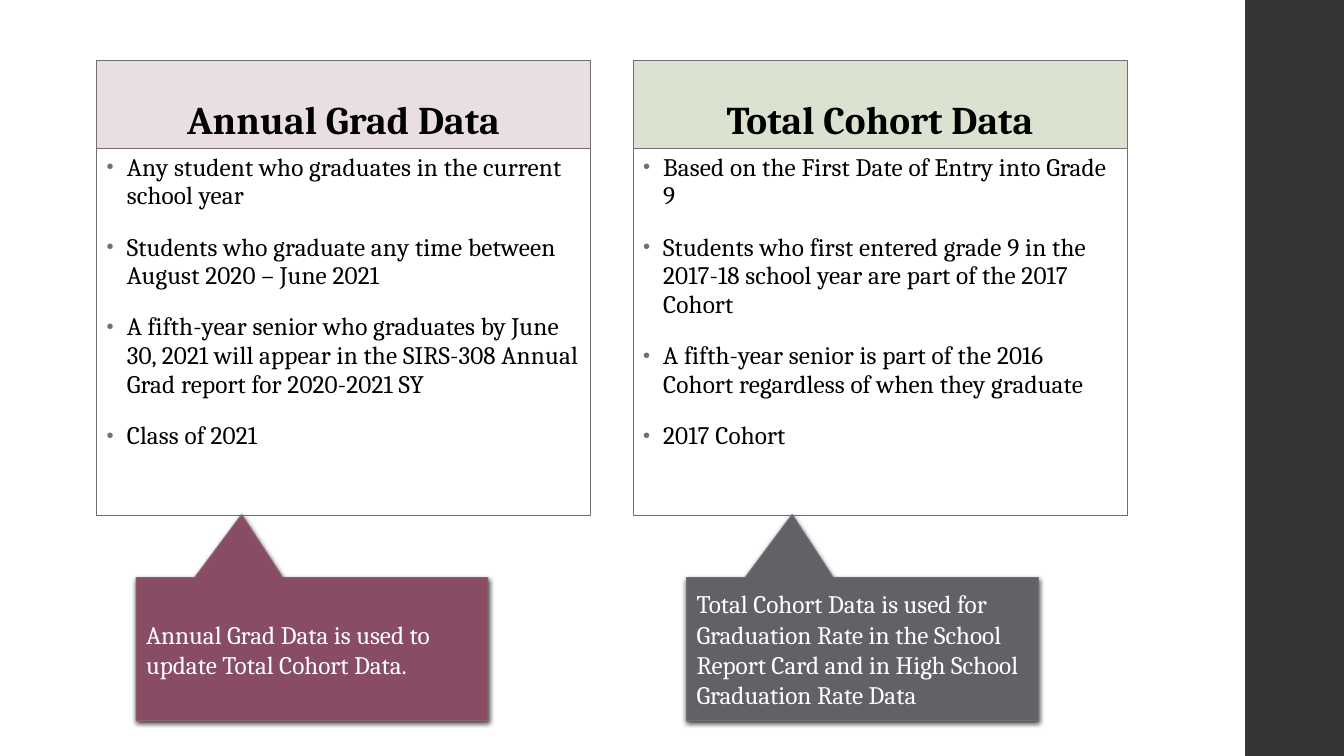
from lxml.etree import SubElement
from pptx import Presentation
from pptx.dml.color import RGBColor
from pptx.enum.shapes import MSO_SHAPE
from pptx.enum.text import MSO_ANCHOR, PP_ALIGN
from pptx.oxml.ns import qn
from pptx.util import Inches, Pt

WIDE, HIGH = Inches(13.33), Inches(7.5)
FONT = "Cambria"
COLORS = {
    "bar": "353537", "edge": "6F6F74", "ink": "000000", "white": "FFFFFF",
    "pink": "E9DFE3", "green": "DCE2D0",
    "plum": "884C64", "rim": "8D6374", "slate": "616168",
}

# Places and sizes are percent of the slide's width and height.
PANEL = {"left": 7.2, "step": 39.91, "width": 36.76}
NOTE = {"left": 10.13, "step": 40.96, "width": 26.18}
HEAD_TOP, HEAD_HIGH, LIST_HIGH = 8, 11.6, 48.53
NOTE_TOP, NOTE_HIGH = 76.4, 18.93

SIDES = [
    {
        "title": "Annual Grad Data", "tint": "pink",
        "items": [
            "Any student who graduates in the current school year",
            "Students who graduate any time between August 2020 – June 2021",
            "A fifth-year senior who graduates by June 30, 2021 will appear "
            "in the SIRS-308 Annual Grad report for 2020-2021 SY",
            "Class of 2021",
        ],
        "note": "Annual Grad Data is used to update Total Cohort Data.",
        "fill": "plum", "line": "rim",
    },
    {
        "title": "Total Cohort Data", "tint": "green",
        "items": [
            "Based on the First Date of Entry into Grade 9",
            "Students who first entered grade 9 in the 2017-18 school year "
            "are part of the 2017 Cohort",
            "A fifth-year senior is part of the 2016 Cohort regardless of "
            "when they graduate",
            "2017 Cohort",
        ],
        "note": "Total Cohort Data is used for Graduation Rate in the School "
                "Report Card and in High School Graduation Rate Data",
        "fill": "slate", "line": "edge",
    },
]


def color(name):
    return RGBColor.from_string(COLORS[name])


def add_box(slide, area, fill=None, line=None, kind=MSO_SHAPE.RECTANGLE):
    """Add a flat shape; area is left, top, width, height in percent."""
    spans = (WIDE, HIGH, WIDE, HIGH)
    box = slide.shapes.add_shape(
        kind, *(int(span * part / 100) for span, part in zip(spans, area)))
    box.shadow.inherit = False
    if fill:
        box.fill.solid()
        box.fill.fore_color.rgb = color(fill)
    else:
        box.fill.background()
    if line:
        box.line.color.rgb = color(line)
        box.line.width = Pt(0.75)
    else:
        box.line.fill.background()
    return box


def add_bullet(para):
    props = para._p.get_or_add_pPr()
    props.set("marL", str(Inches(0.2)))
    props.set("indent", str(-Inches(0.2)))
    tint = SubElement(props, qn("a:buClr"))
    SubElement(tint, qn("a:srgbClr"), val=COLORS["edge"])
    SubElement(props, qn("a:buSzPct"), val="80000")
    SubElement(props, qn("a:buFont"), typeface="Arial")
    SubElement(props, qn("a:buChar"), char="•")


def set_font(para, size, ink, bold=False):
    para.font.name = FONT
    para.font.size = Pt(size)
    para.font.bold = bold
    para.font.color.rgb = color(ink)


def set_space(para):
    """Tighten the lines and widen the letters of panel text."""
    para.line_spacing = 0.95
    para.space_after = Pt(2)
    para._p.pPr.find(qn("a:defRPr")).set("spc", "10")


def add_head(slide, area, text, tint):
    frame = add_box(slide, area, tint, "edge").text_frame
    frame.word_wrap = True
    frame.vertical_anchor = MSO_ANCHOR.BOTTOM
    para = frame.paragraphs[0]
    para.text = text
    para.alignment = PP_ALIGN.CENTER
    set_font(para, 28, "ink", bold=True)
    set_space(para)


def add_list(slide, area, items):
    frame = add_box(slide, area, line="edge").text_frame
    frame.word_wrap = True
    frame.vertical_anchor = MSO_ANCHOR.TOP
    for i, item in enumerate(items):
        para = frame.add_paragraph() if i else frame.paragraphs[0]
        para.text = item
        para.alignment = PP_ALIGN.LEFT
        add_bullet(para)
        set_font(para, 18, "ink")
        set_space(para)
        if i:
            para.space_before = Pt(14)


def add_shade(box):
    """Give the shape a soft shadow just below it."""
    effects = box._element.spPr.find(qn("a:effectLst"))
    shade = SubElement(effects, qn("a:outerShdw"), blurRad=str(Pt(4)),
                       dist=str(Pt(1.2)), dir="5400000", rotWithShape="0")
    tone = SubElement(shade, qn("a:srgbClr"), val=COLORS["ink"])
    SubElement(tone, qn("a:alpha"), val="75000")


def add_note(slide, area, text, fill, line):
    box = add_box(slide, area, fill, line, MSO_SHAPE.RECTANGULAR_CALLOUT)
    box.adjustments[0] = -0.2
    box.adjustments[1] = -0.94
    add_shade(box)
    frame = box.text_frame
    frame.word_wrap = True
    frame.vertical_anchor = MSO_ANCHOR.MIDDLE
    para = frame.paragraphs[0]
    para.text = text
    para.alignment = PP_ALIGN.LEFT
    set_font(para, 18, "white")


def add_side(slide, col, side):
    """Add one column: its heading, its list and its callout."""
    left = PANEL["left"] + col * PANEL["step"]
    wide = PANEL["width"]
    add_head(slide, (left, HEAD_TOP, wide, HEAD_HIGH),
             side["title"], side["tint"])
    add_list(slide, (left, HEAD_TOP + HEAD_HIGH, wide, LIST_HIGH),
             side["items"])
    left = NOTE["left"] + col * NOTE["step"]
    add_note(slide, (left, NOTE_TOP, NOTE["width"], NOTE_HIGH),
             side["note"], side["fill"], side["line"])


def main():
    deck = Presentation()
    deck.slide_width, deck.slide_height = WIDE, HIGH
    slide = deck.slides.add_slide(deck.slide_layouts[6])
    add_box(slide, (92.65, 0, 7.35, 100), "bar")
    for col, side in enumerate(SIDES):
        add_side(slide, col, side)
    deck.save("out.pptx")


if __name__ == "__main__":
    main()
